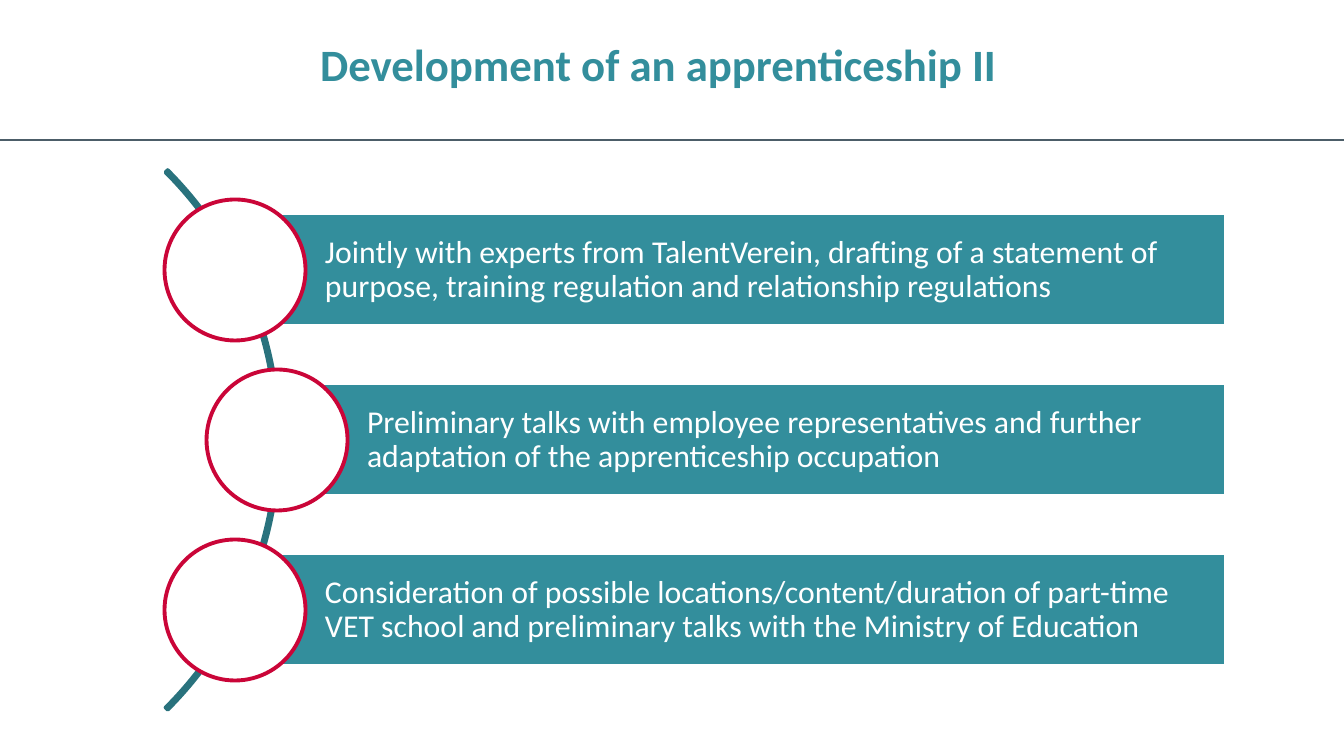
from lxml.etree import SubElement
from pptx import Presentation
from pptx.dml.color import RGBColor
from pptx.enum.shapes import MSO_CONNECTOR, MSO_SHAPE
from pptx.enum.text import MSO_ANCHOR, MSO_AUTO_SIZE, PP_ALIGN
from pptx.oxml.ns import qn
from pptx.util import Emu, Pt

EMU_PER_PX = 914400 / 134.4
SLIDE_W, SLIDE_H = 1344, 756

TEAL = RGBColor(0x33, 0x8E, 0x9C)
DARK_TEAL = RGBColor(0x29, 0x72, 0x7D)
RED = RGBColor(0xCA, 0x05, 0x38)
SLATE = RGBColor(0x4C, 0x5D, 0x68)
WHITE = RGBColor(0xFF, 0xFF, 0xFF)
FONT = "Calibri"

MIDDLE_Y = 440
STEP_PITCH = 170
BAR_RIGHT, BAR_H = 1226, 113
CIRCLE_D = 141
ARC_CENTER_X, ARC_D = -102, 763

# Text and circle centre of each step
STEPS = [
    ("Jointly with experts from TalentVerein, drafting of a statement of "
     "purpose, training regulation and relationship regulations", 235),
    ("Preliminary talks with employee representatives and further "
     "adaptation of the apprenticeship occupation", 277),
    ("Consideration of possible locations/content/duration of part-time "
     "VET school and preliminary talks with the Ministry of Education", 235),
]


def px(n):
    return Emu(round(n * EMU_PER_PX))


def add_run(p, text, size, color, bold=False):
    r = p.add_run()
    r.text = text
    r.font.name = FONT
    r.font.size = Pt(size)
    r.font.bold = bold
    r.font.color.rgb = color


def set_margins(tf, left, top, right, bottom):
    tf.margin_left, tf.margin_top = px(left), px(top)
    tf.margin_right, tf.margin_bottom = px(right), px(bottom)


def add_shape(slide, kind, x, y, w, h, line, fill=None):
    """Add an outlined preset shape; without a fill colour it stays hollow."""
    sp = slide.shapes.add_shape(kind, px(x), px(y), px(w), px(h))
    sp.shadow.inherit = False
    if fill is None:
        sp.fill.background()
    else:
        sp.fill.solid()
        sp.fill.fore_color.rgb = fill
    sp.line.color.rgb = line
    sp.line.width = Pt(2.08)
    return sp


def set_title(slide, text):
    title = slide.shapes.title
    title.left, title.top = px(320), px(34)
    title.width, title.height = px(706), px(91)
    tf = title.text_frame
    tf.auto_size = MSO_AUTO_SIZE.NONE
    tf.word_wrap = False
    tf.vertical_anchor = MSO_ANCHOR.TOP
    set_margins(tf, 0, 0, 0, 0)
    p = tf.paragraphs[0]
    p.alignment = PP_ALIGN.LEFT
    p.line_spacing = Pt(30)
    p.space_before = Pt(0)
    add_run(p, text, 24, TEAL, bold=True)


def add_rule(slide, y):
    rule = slide.shapes.add_connector(
        MSO_CONNECTOR.STRAIGHT, px(SLIDE_W), px(y), px(0), px(y))
    rule.line.color.rgb = SLATE
    rule.line.width = Pt(1.5)
    SubElement(rule._element.spPr, qn("a:effectLst"))


def add_arc(slide):
    radius = ARC_D / 2
    arc = add_shape(slide, MSO_SHAPE.BLOCK_ARC, ARC_CENTER_X - radius,
                    MIDDLE_Y - radius, ARC_D, ARC_D, DARK_TEAL)
    for i, value in enumerate((189, 27, 0.004)):
        arc.adjustments[i] = value


def add_step(slide, text, center_x, center_y):
    """Add a text bar whose left edge starts at the centre of its circle."""
    bar = add_shape(slide, MSO_SHAPE.RECTANGLE, center_x, center_y - BAR_H / 2,
                    BAR_RIGHT - center_x, BAR_H, WHITE, TEAL)
    tf = bar.text_frame
    tf.word_wrap = True
    tf.vertical_anchor = MSO_ANCHOR.MIDDLE
    set_margins(tf, 90, 7, 7, 7)
    p = tf.paragraphs[0]
    p.alignment = PP_ALIGN.LEFT
    p.line_spacing = 0.9
    add_run(p, text, 17, WHITE)
    radius = CIRCLE_D / 2
    add_shape(slide, MSO_SHAPE.OVAL, center_x - radius, center_y - radius,
              CIRCLE_D, CIRCLE_D, RED, WHITE)


def main():
    prs = Presentation()
    prs.slide_width, prs.slide_height = px(SLIDE_W), px(SLIDE_H)
    slide = prs.slides.add_slide(prs.slide_layouts[5])
    add_rule(slide, 140)
    set_title(slide, "Development of an apprenticeship II")
    add_arc(slide)
    for i, (text, center_x) in enumerate(STEPS):
        add_step(slide, text, center_x, MIDDLE_Y + (i - 1) * STEP_PITCH)
    prs.save("out.pptx")


if __name__ == "__main__":
    main()
